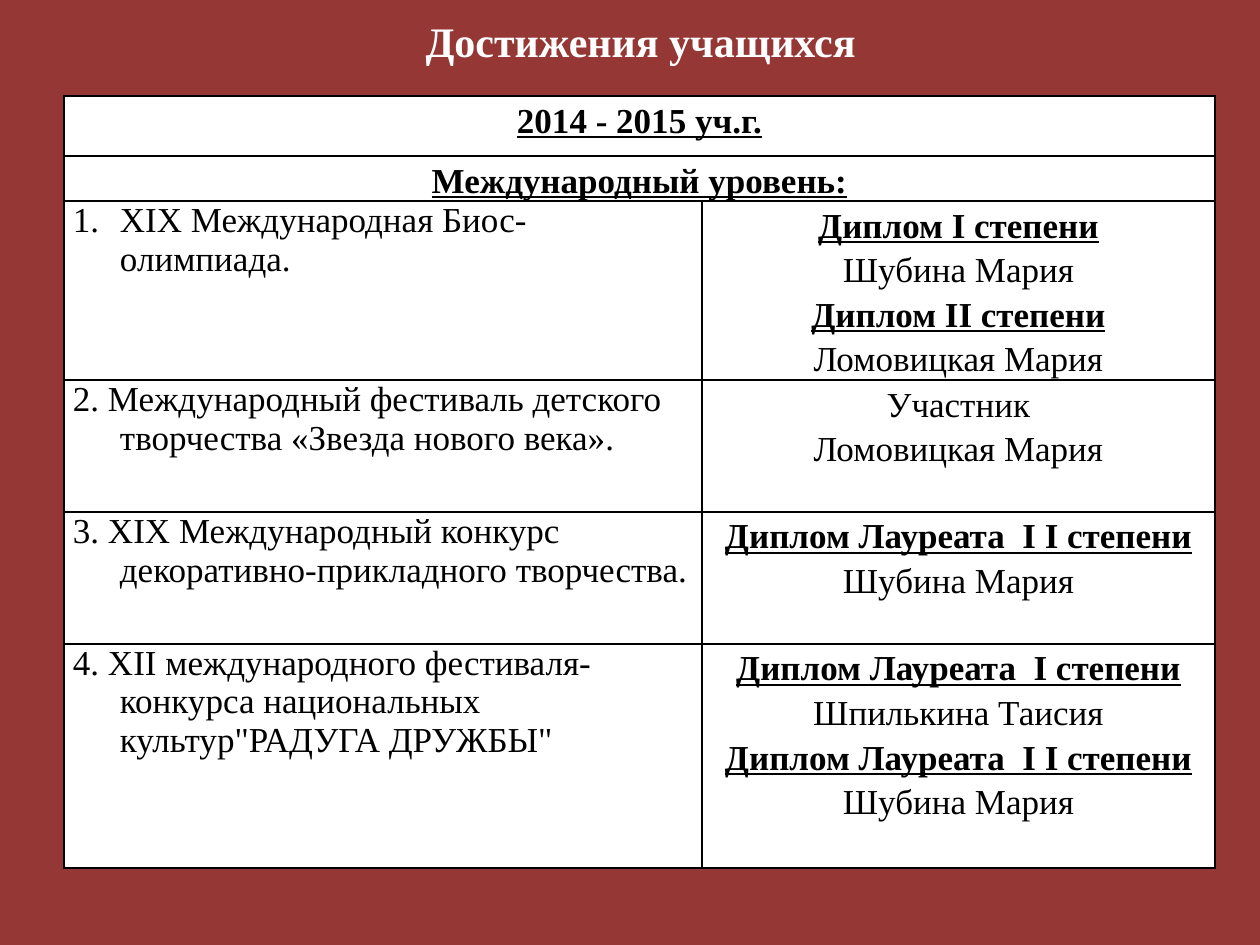
from dataclasses import dataclass
from typing import Optional

import pptx
import pptx.dml.color
import pptx.enum.text
import pptx.oxml.ns
import pptx.util
from lxml import etree

EMU_PER_PX = 914400 / 126
FONT = "Times New Roman"
BACKGROUND = "953735"
WHITE = "FFFFFF"
BLACK = "000000"
COLUMN_WIDTHS = (638, 513)
HANGING_INDENT = 47
AWARD_SPACING = pptx.util.Pt(25.5)
CENTER = pptx.enum.text.PP_ALIGN.CENTER
LEFT = pptx.enum.text.PP_ALIGN.LEFT


@dataclass(frozen=True)
class Award:
    degree: Optional[str]
    pupil: str


@dataclass(frozen=True)
class Achievement:
    event: str
    awards: tuple[Award, ...]
    height: int
    numbered: bool = False


HEADINGS = (("2014 - 2015 уч.г.", 60), ("Международный уровень:", 45))
ACHIEVEMENTS = (
    Achievement("XIX Международная Биос-олимпиада.",
                (Award("Диплом I степени", "Шубина Мария"),
                 Award("Диплом II степени", "Ломовицкая Мария")), 179, numbered=True),
    Achievement("2. Международный фестиваль детского творчества «Звезда нового века».",
                (Award(None, "Участник"), Award(None, "Ломовицкая Мария")), 132),
    Achievement("3. XIX Международный конкурс декоративно-прикладного творчества.",
                (Award("Диплом Лауреата  I I степени", "Шубина Мария"),), 132),
    Achievement('4. XII международного фестиваля-конкурса национальных культур"РАДУГА ДРУЖБЫ"',
                (Award("Диплом Лауреата  I степени", "Шпилькина Таисия"),
                 Award("Диплом Лауреата  I I степени", "Шубина Мария")), 224),
)


def px(length: int) -> pptx.util.Emu:
    return pptx.util.Emu(round(length * EMU_PER_PX))


def rgb(color: str) -> pptx.dml.color.RGBColor:
    return pptx.dml.color.RGBColor.from_string(color)


def write(frame, text: str, *, size: int = 20, color: str = BLACK, bold: bool = False,
          underline: bool = False, align=CENTER, spacing=1.0):
    """Fill the first paragraph if it is empty, otherwise add one."""
    paragraph = frame.paragraphs[0] if not frame.text else frame.add_paragraph()
    paragraph.alignment = align
    paragraph.line_spacing = spacing
    run = paragraph.add_run()
    run.text = text
    run.font.name = FONT
    run.font.size = pptx.util.Pt(size)
    run.font.bold = bold
    run.font.underline = underline
    run.font.color.rgb = rgb(color)
    return paragraph


def write_emphasis(frame, text: str) -> None:
    write(frame, text, bold=True, underline=True, spacing=AWARD_SPACING)


def write_event(frame, achievement: Achievement) -> None:
    paragraph = write(frame, achievement.event, align=LEFT)
    properties = paragraph._p.get_or_add_pPr()
    properties.set("marL", str(px(HANGING_INDENT)))
    properties.set("indent", str(-px(HANGING_INDENT)))
    if achievement.numbered:
        bullet_font = etree.SubElement(properties, pptx.oxml.ns.qn("a:buFont"))
        bullet_font.set("typeface", FONT)
        numbering = etree.SubElement(properties, pptx.oxml.ns.qn("a:buAutoNum"))
        numbering.set("type", "arabicPeriod")


def write_awards(frame, awards: tuple[Award, ...]) -> None:
    for award in awards:
        if award.degree:
            write_emphasis(frame, award.degree)
        write(frame, award.pupil, spacing=AWARD_SPACING)


def format_cell(cell) -> None:
    cell.margin_left = cell.margin_right = px(9)
    cell.margin_top = cell.margin_bottom = 0
    properties = cell._tc.get_or_add_tcPr()
    for side in ("lnL", "lnR", "lnT", "lnB"):
        border = etree.SubElement(properties, pptx.oxml.ns.qn(f"a:{side}"))
        border.set("w", str(pptx.util.Pt(1)))
        fill = etree.SubElement(border, pptx.oxml.ns.qn("a:solidFill"))
        etree.SubElement(fill, pptx.oxml.ns.qn("a:srgbClr")).set("val", BLACK)
    cell.fill.solid()
    cell.fill.fore_color.rgb = rgb(WHITE)


def add_title(slide) -> None:
    title = slide.shapes.title
    title.left, title.top, title.width, title.height = px(413), px(9), px(470), px(63)
    frame = title.text_frame
    frame.word_wrap = False
    frame.auto_size = pptx.enum.text.MSO_AUTO_SIZE.SHAPE_TO_FIT_TEXT
    frame.vertical_anchor = pptx.enum.text.MSO_ANCHOR.TOP
    write(frame, "Достижения учащихся", size=24, color=WHITE, bold=True, align=LEFT)


def add_achievements(slide) -> None:
    heights = [height for _, height in HEADINGS] + [item.height for item in ACHIEVEMENTS]
    table = slide.shapes.add_table(len(heights), len(COLUMN_WIDTHS), px(64), px(96),
                                   px(sum(COLUMN_WIDTHS)), px(sum(heights))).table
    table.first_row = table.horz_banding = False
    for column, width in zip(table.columns, COLUMN_WIDTHS):
        column.width = px(width)
    for row, height in zip(table.rows, heights):
        row.height = px(height)
        for cell in row.cells:
            format_cell(cell)
    for index, (heading, _) in enumerate(HEADINGS):
        table.cell(index, 0).merge(table.cell(index, 1))
        write_emphasis(table.cell(index, 0).text_frame, heading)
    for index, achievement in enumerate(ACHIEVEMENTS, start=len(HEADINGS)):
        write_event(table.cell(index, 0).text_frame, achievement)
        write_awards(table.cell(index, 1).text_frame, achievement.awards)


def main() -> None:
    presentation = pptx.Presentation()
    presentation.slide_width, presentation.slide_height = px(1260), px(945)
    slide = presentation.slides.add_slide(presentation.slide_layouts[5])
    slide.background.fill.solid()
    slide.background.fill.fore_color.rgb = rgb(BACKGROUND)
    add_achievements(slide)
    add_title(slide)
    presentation.save("out.pptx")


if __name__ == "__main__":
    main()
